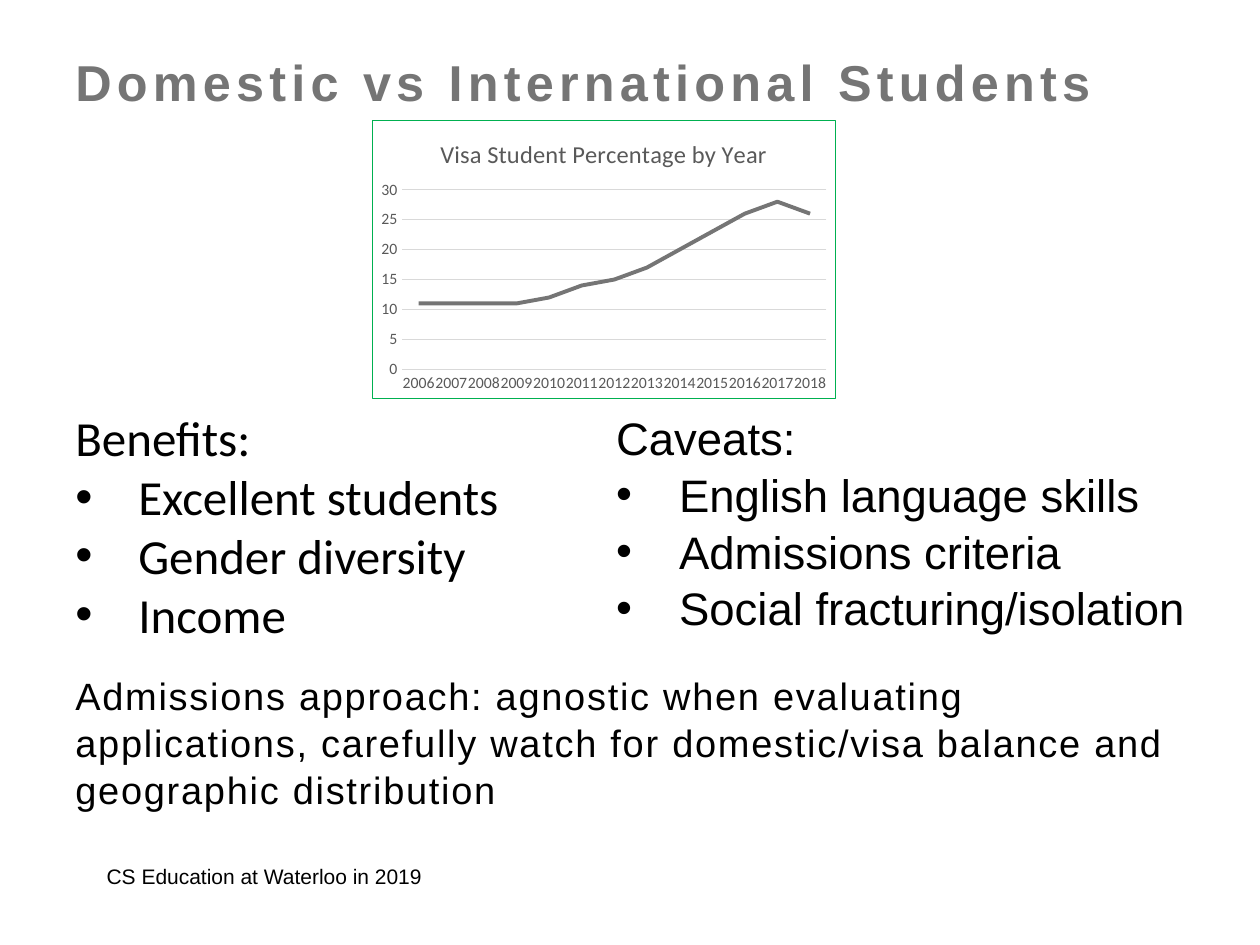
from lxml import etree
from pptx import Presentation
from pptx.chart.data import CategoryChartData
from pptx.dml.color import RGBColor
from pptx.enum.chart import XL_CHART_TYPE, XL_MARKER_STYLE, XL_TICK_MARK
from pptx.enum.text import MSO_ANCHOR
from pptx.oxml import parse_xml
from pptx.oxml.ns import nsdecls, qn
from pptx.util import Cm, Pt

LINE = XL_CHART_TYPE.LINE
NO_MARKER = XL_MARKER_STYLE.NONE
NO_TICK = XL_TICK_MARK.NONE
TOP, MIDDLE = MSO_ANCHOR.TOP, MSO_ANCHOR.MIDDLE

COLORS = {"text": "000000", "gray": "757575", "label": "595959",
          "grid": "D9D9D9", "border": "00B050"}
LEFT = 1.27


def rgb(name):
    return RGBColor.from_string(COLORS[name])


def add_text(box, lines, size, font="Arial", color="text", bold=False,
             spacing=0, line_spacing=None, anchor=TOP):
    """Add a text box; lines after the first are bulleted."""
    sp = s.shapes.add_textbox(*[Cm(v) for v in box])
    tf = sp.text_frame
    tf.word_wrap = True
    tf.vertical_anchor = anchor
    for i, line in enumerate(lines):
        p = tf.paragraphs[0] if i == 0 else tf.add_paragraph()
        p.line_spacing = line_spacing
        if i:
            pPr = p._p.get_or_add_pPr()
            pPr.set("marL", str(Cm(LEFT)))
            pPr.set("indent", str(-Cm(LEFT)))
            etree.SubElement(pPr, qn("a:buFont")).set("typeface", "Arial")
            etree.SubElement(pPr, qn("a:buChar")).set("char", "•")
        r = p.add_run()
        r.text = line
        r.font.name = font
        r.font.size = Pt(size)
        r.font.bold = bold
        r.font.color.rgb = rgb(color)
        if spacing:
            r._r.get_or_add_rPr().set("spc", str(spacing * 100))
    return tf


prs = Presentation()
prs.slide_width, prs.slide_height = Cm(25.4), Cm(19.05)
s = prs.slides.add_slide(prs.slide_layouts[6])

# Title, closing statement and footer
tf = add_text((LEFT, 0.79, 22.86, 1.78), ["Domestic vs International Students"],
              28.8, color="gray", bold=True, spacing=3)
tf.margin_top = Cm(0.25)
add_text((LEFT, 13.39, 22.86, 2.57),
         ["Admissions approach: agnostic when evaluating applications, carefully "
          "watch for domestic/visa balance and geographic distribution"],
         21.7, spacing=1, line_spacing=1.04)
add_text((1.9, 17.15, 15.27, 1.02), ["CS Education at Waterloo in 2019"], 12,
         anchor=MIDDLE)

# Visa student chart
data = CategoryChartData()
data.categories = [str(year) for year in range(2006, 2019)]
data.add_series("Series 1", [11, 11, 11, 11, 12, 14, 15, 17, 20, 23, 26, 28, 26])
chart = s.shapes.add_chart(LINE, Cm(7.49), Cm(2.41), Cm(9.37), Cm(5.64), data).chart
chart.has_legend = False
chart.font.name = "Calibri"
chart.font.size = Pt(10)
chart.font.color.rgb = rgb("text")

chart.has_title = True
r = chart.chart_title.text_frame.paragraphs[0].add_run()
r.text = "Visa Student Percentage by Year"
r.font.name = "Calibri"
r.font.size = Pt(14)
r.font.bold = False
r.font.color.rgb = rgb("label")
chart.chart_title.include_in_layout = False

years, percent = chart.category_axis, chart.value_axis
for axis in (years, percent):
    axis.major_tick_mark = axis.minor_tick_mark = NO_TICK
    font = axis.tick_labels.font
    font.name = "Calibri"
    font.size = Pt(9)
    font.color.rgb = rgb("label")
    axis._element.find(qn("c:txPr")).find(qn("a:bodyPr")).set("rot", "-60000000")
percent.minimum_scale, percent.maximum_scale, percent.major_unit = 0, 30, 5
percent.format.line.fill.background()
for line in (years.format.line, percent.major_gridlines.format.line):
    line.color.rgb = rgb("grid")
    line.width = Pt(0.75)

plot = chart.plots[0]
plot.vary_by_categories = False
series = plot.series[0]
series.smooth = False
series.marker.style = NO_MARKER
series.format.line.color.rgb = rgb("gray")
series.format.line.width = Pt(2.25)

# Plot area position and chart border
plot_area = chart._chartSpace.chart.plotArea
for old in plot_area.findall(qn("c:layout")):
    plot_area.remove(old)
layout = "".join(f'<c:{tag} val="{val}"/>' for tag, val in (
    ("layoutTarget", "inner"), ("xMode", "edge"), ("yMode", "edge"),
    ("x", 0.065), ("y", 0.25), ("w", 0.915), ("h", 0.645)))
plot_area.insert(0, parse_xml(
    f'<c:layout {nsdecls("c")}><c:manualLayout>{layout}</c:manualLayout></c:layout>'))
chart._chartSpace.find(qn("c:txPr")).addprevious(parse_xml(
    f'<c:spPr {nsdecls("c", "a")}><a:noFill/><a:ln w="{Pt(0.75)}"><a:solidFill>'
    f'<a:srgbClr val="{COLORS["border"]}"/></a:solidFill></a:ln></c:spPr>'))

# Caveats and benefits
add_text((12.17, 8.1, 12.47, 4.7),
         ["Caveats:", "English language skills", "Admissions criteria",
          "Social fracturing/isolation"], 26, line_spacing=1.04)
add_text((LEFT, 8.1, 11.4, 5.05),
         ["Benefits:", "Excellent students", "Gender diversity", "Income"],
         28, font="Calibri")

prs.save("out.pptx")
